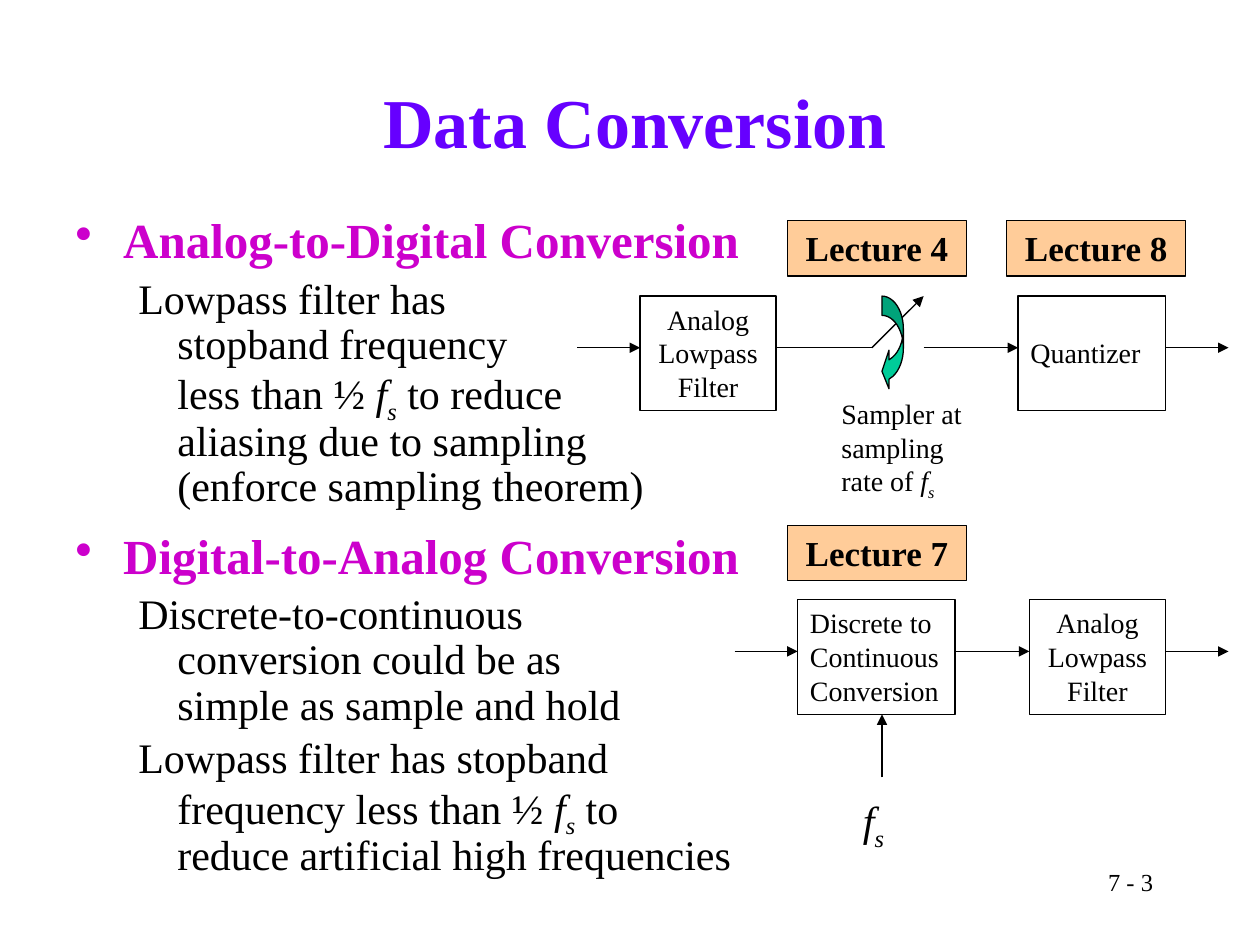
"""Build the Data Conversion slide with its two block diagrams."""
from dataclasses import dataclass

from lxml import etree
from pptx import Presentation
from pptx.dml.color import RGBColor
from pptx.enum.shapes import MSO_CONNECTOR, MSO_SHAPE
from pptx.enum.text import MSO_ANCHOR, PP_ALIGN
from pptx.oxml.ns import qn
from pptx.util import Inches, Pt

LEFT, CENTER, RIGHT = PP_ALIGN.LEFT, PP_ALIGN.CENTER, PP_ALIGN.RIGHT
TOP, MIDDLE = MSO_ANCHOR.TOP, MSO_ANCHOR.MIDDLE
RECTANGLE, CURVED_ARROW = MSO_SHAPE.RECTANGLE, MSO_SHAPE.CURVED_LEFT_ARROW
STRAIGHT = MSO_CONNECTOR.STRAIGHT


@dataclass(frozen=True)
class Theme:
    font: str = "Times New Roman"
    ink: str = "000000"
    title: str = "6600FF"
    heading: str = "CC00CC"
    tag: str = "FFCC99"
    sampler: str = "00CC99"
    title_size: int = 40
    heading_size: int = 28
    body_size: int = 24
    tag_size: int = 20
    label_size: int = 16
    number_size: int = 14
    line_width: float = 0.75


THEME = Theme()


@dataclass(frozen=True)
class Span:
    text: str
    italic: bool = False
    subscript: bool = False


@dataclass(frozen=True)
class Style:
    size: int
    color: str = THEME.ink
    bold: bool = False
    align: PP_ALIGN = LEFT


@dataclass(frozen=True)
class Block:
    left: float
    top: float
    width: float
    height: float
    spans: tuple
    style: Style
    fill: str = ""


@dataclass(frozen=True)
class Wire:
    start: tuple
    end: tuple
    arrow: bool = True


@dataclass(frozen=True)
class Entry:
    spans: tuple
    space: float
    heading: bool = False


FREQUENCY = (Span("f", True), Span("s", True, True))
LABEL = Style(THEME.label_size)
CENTERED = Style(THEME.label_size, align=CENTER)
TAG = Style(THEME.tag_size, bold=True, align=CENTER)
HEADING = Style(THEME.heading_size, THEME.heading, True)
BODY = Style(THEME.body_size)
FILTER = (Span("Analog Lowpass Filter"),)
BLOCK_HEIGHT = 0.91
UPPER_TOP, LOWER_TOP = 2.35, 4.76
UPPER_WIRE, LOWER_WIRE = 2.76, 5.17

ENTRIES = (
    Entry((Span("Analog-to-Digital Conversion"),), 11.2, True),
    Entry((Span("Lowpass filter has\nstopband frequency\nless than ½ "), *FREQUENCY,
           Span(" to reduce\naliasing due to sampling\n(enforce sampling theorem)")), 4.8),
    Entry((Span("Digital-to-Analog Conversion"),), 12, True),
    Entry((Span("Discrete-to-continuous\nconversion could be as\nsimple as sample and hold"),), 4.8),
    Entry((Span("Lowpass filter has stopband\nfrequency less than ½ "), *FREQUENCY,
           Span(" to\nreduce artificial high frequencies")), 4.8),
)
TAGS = [Block(left, top, 1.42, 0.44, (Span(text),), TAG, THEME.tag)
        for text, left, top in (("Lecture 4", 6.25, 1.75), ("Lecture 8", 7.99, 1.75),
                                ("Lecture 7", 6.25, 4.17))]
BLOCKS = [
    Block(5.08, UPPER_TOP, 1.08, BLOCK_HEIGHT, FILTER, CENTERED),
    Block(8.08, UPPER_TOP, 1.17, BLOCK_HEIGHT, (Span("\nQuantizer\n"),), LABEL),
    Block(6.33, LOWER_TOP, 1.25, BLOCK_HEIGHT, (Span("Discrete to Continuous Conversion"),), LABEL),
    Block(8.17, LOWER_TOP, 1.08, BLOCK_HEIGHT, FILTER, CENTERED),
]
NOTES = (
    Block(6.58, 3.1, 1.33, 0.9, (Span("Sampler at sampling rate of "), *FREQUENCY), LABEL),
    Block(6.75, 6.26, 0.42, 0.5, FREQUENCY, BODY),
    Block(7.17, 6.83, 2.08, 0.5, (Span("7 - 3"),), Style(THEME.number_size, align=RIGHT)),
)
WIRES = [
    Wire((6.17, UPPER_WIRE), (6.92, UPPER_WIRE), False),
    Wire((6.92, UPPER_WIRE), (7.33, UPPER_TOP)),
    Wire((7, 6.17), (7, 5.67)),
    *(Wire((start, UPPER_WIRE), (end, UPPER_WIRE))
      for start, end in ((4.58, 5.08), (7.33, 8.08), (9.25, 9.75))),
    *(Wire((start, LOWER_WIRE), (end, LOWER_WIRE))
      for start, end in ((5.83, 6.33), (7.58, 8.17), (9.25, 9.75))),
]


def write_spans(para, spans: tuple, style: Style) -> None:
    """Write formatted spans, turning newlines into line breaks."""
    para.alignment = style.align
    for part in spans:
        for index, text in enumerate(part.text.split("\n")):
            if index:
                para.add_line_break()
            if not text:
                continue
            span = para.add_run()
            span.text = text
            values = {"name": THEME.font, "size": Pt(style.size),
                      "bold": style.bold, "italic": part.italic}
            for name, value in values.items():
                setattr(span.font, name, value)
            span.font.color.rgb = RGBColor.from_string(style.color)
            if part.subscript:
                span.font._element.set("baseline", "-25000")
    for line_break in para._p.findall(qn("a:br")):
        properties = etree.SubElement(line_break, qn("a:rPr"))
        properties.set("sz", str(style.size * 100))


def format_frame(frame, anchor: MSO_ANCHOR = TOP) -> None:
    """Set wrapping and anchoring."""
    for name, value in {"word_wrap": True, "vertical_anchor": anchor}.items():
        setattr(frame, name, value)


def lengths(*values: float) -> list:
    """Convert inch values to lengths."""
    return [Inches(value) for value in values]


def outline(line) -> None:
    """Give a line the common colour and width."""
    line.color.rgb = RGBColor.from_string(THEME.ink)
    line.width = Pt(THEME.line_width)


def paint(shape, fill: str) -> None:
    """Remove the shadow and set fill and outline."""
    shape.shadow.inherit = False
    if fill:
        shape.fill.solid()
        shape.fill.fore_color.rgb = RGBColor.from_string(fill)
    else:
        shape.fill.background()
    outline(shape.line)


def draw_block(page, block: Block, framed: bool = True) -> None:
    """Draw a labelled rectangle or a plain text box."""
    place = lengths(block.left, block.top, block.width, block.height)
    if framed:
        box = page.shapes.add_shape(RECTANGLE, *place)
        paint(box, block.fill)
    else:
        box = page.shapes.add_textbox(*place)
    format_frame(box.text_frame)
    write_spans(box.text_frame.paragraphs[0], block.spans, block.style)


def draw_wire(page, wire: Wire) -> None:
    """Draw a signal line with an optional arrowhead."""
    connector = page.shapes.add_connector(STRAIGHT, *lengths(*wire.start, *wire.end))
    outline(connector.line)
    if wire.arrow:
        etree.SubElement(connector.line._get_or_add_ln(), qn("a:tailEnd")).set("type", "triangle")
    etree.SubElement(connector._element.spPr, qn("a:effectLst"))


def draw_title(page) -> None:
    """Place and format the title."""
    title = page.shapes.title
    place = zip(("left", "top", "width", "height"), lengths(0.5, 0.33, 9.08, 1.25))
    for name, value in place:
        setattr(title, name, value)
    format_frame(title.text_frame, MIDDLE)
    style = Style(THEME.title_size, THEME.title, True, CENTER)
    write_spans(title.text_frame.paragraphs[0], (Span("Data Conversion"),), style)


def draw_body(page) -> None:
    """Write the bulleted headings and their indented details."""
    frame = page.shapes.add_textbox(*lengths(0.5, 1.67, 8.5, 5.33)).text_frame
    format_frame(frame)
    for index, entry in enumerate(ENTRIES):
        para = frame.add_paragraph() if index else frame.paragraphs[0]
        write_spans(para, entry.spans, HEADING if entry.heading else BODY)
        for name, value in {"line_spacing": 0.9, "space_before": Pt(entry.space)}.items():
            setattr(para, name, value)
        margin, indent = (0.38, -0.38) if entry.heading else (0.81, -0.31)
        properties = para._p.get_or_add_pPr()
        for name, value in {"marL": margin, "indent": indent}.items():
            properties.set(name, str(Inches(value)))
        if entry.heading:
            etree.SubElement(properties, qn("a:buChar")).set("char", "•")
        else:
            properties.set("lvl", "1")
            etree.SubElement(properties, qn("a:buNone"))


def draw_sampler(page) -> None:
    """Draw the curved arrow over the sampler switch."""
    arrow = page.shapes.add_shape(CURVED_ARROW, *lengths(7, UPPER_TOP, 0.17, 0.75))
    for index, value in enumerate((0.9, 1.8, 0.33)):
        arrow.adjustments[index] = value
    paint(arrow, THEME.sampler)


def main() -> None:
    """Build and save the deck."""
    deck = Presentation()
    deck.slide_width, deck.slide_height = lengths(10, 7.5)
    page = deck.slides.add_slide(deck.slide_layouts[5])
    draw_title(page)
    draw_body(page)
    for wire in WIRES:
        draw_wire(page, wire)
    for block in BLOCKS + TAGS:
        draw_block(page, block)
    draw_sampler(page)
    for note in NOTES:
        draw_block(page, note, framed=False)
    deck.save("out.pptx")


if __name__ == "__main__":
    main()
